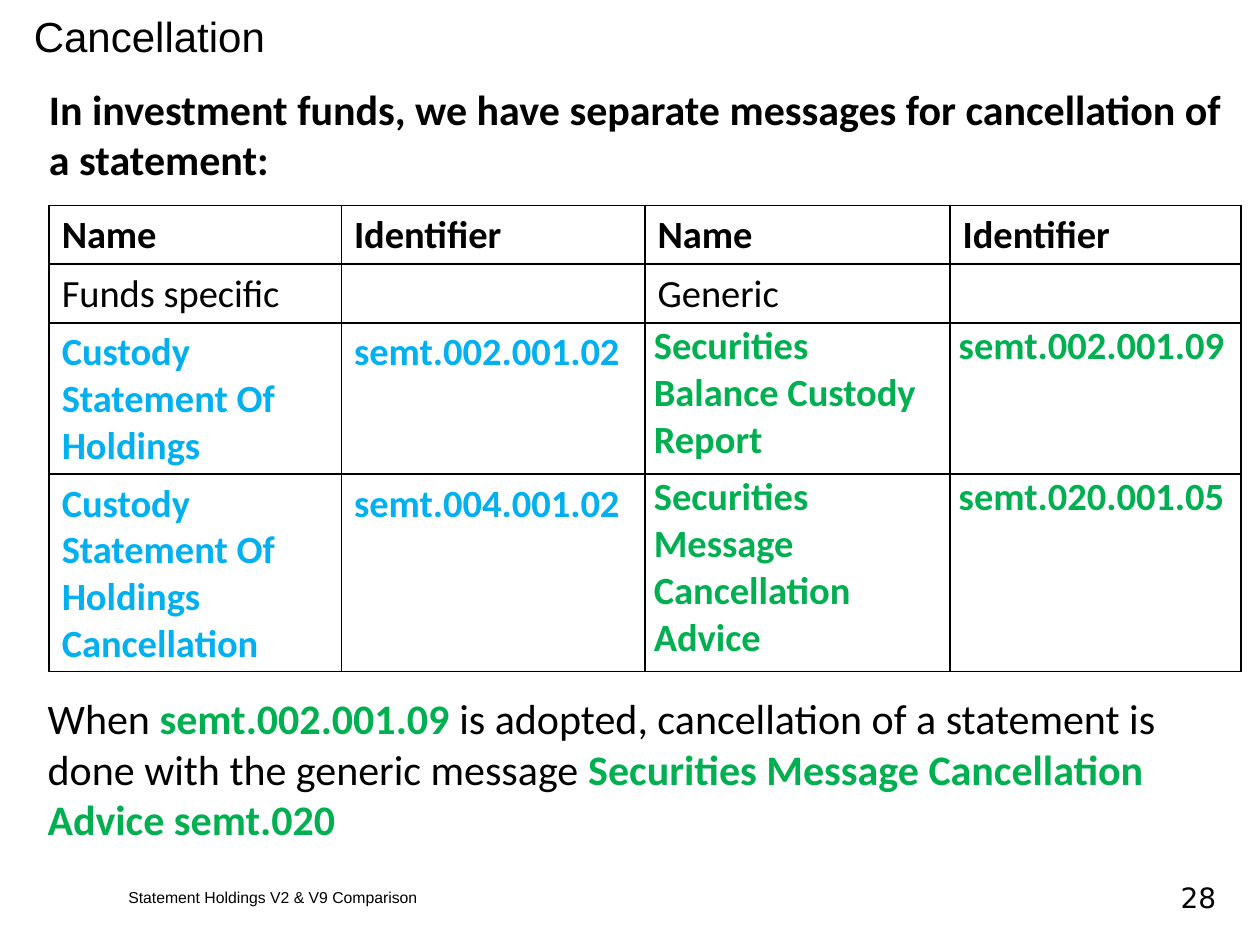
from typing import NamedTuple

from lxml.etree import SubElement as Sub
from pptx import Presentation
from pptx.dml.color import RGBColor as Color
from pptx.enum.text import MSO_ANCHOR as Anchor, PP_ALIGN as Align
from pptx.oxml.ns import qn
from pptx.util import Emu, Inches, Pt

BLACK = Color(0x00, 0x00, 0x00)
BLUE = Color(0x00, 0xB0, 0xF0)
GREEN = Color(0x00, 0xB0, 0x50)
WIDE, HIGH = Inches(10), Inches(7.5)


class Box(NamedTuple):
    """A frame in percent of the slide's width and height."""
    left: float
    top: float
    width: float
    height: float

    def emu(self) -> tuple:
        sides = (WIDE, HIGH, WIDE, HIGH)
        return tuple(Emu(int(side * part / 100)) for side, part in zip(sides, self))


class Run(NamedTuple):
    text: str
    color: Color = BLACK
    bold: bool = False


class Cell(NamedTuple):
    run: Run
    tight: bool = False


def write(frame, *runs: Run, size: float, font: str = "Calibri", align=Align.LEFT) -> None:
    frame.word_wrap = True
    para = frame.paragraphs[0]
    para.alignment = align
    for item in runs:
        run = para.add_run()
        run.text = item.text
        run.font.name = font
        run.font.size = Pt(size)
        run.font.bold = item.bold
        run.font.color.rgb = item.color


def label(slide, box: Box, *runs: Run, anchor=Anchor.TOP, **style) -> None:
    frame = slide.shapes.add_textbox(*box.emu()).text_frame
    write(frame, *runs, **style)
    frame.vertical_anchor = anchor


def rule(cell) -> None:
    """Draw a thin black line on all four sides of a cell."""
    props = cell._tc.get_or_add_tcPr()
    for side in ("lnL", "lnR", "lnT", "lnB"):
        line = Sub(props, qn(f"a:{side}"), w=str(Pt(1)))
        Sub(Sub(line, qn("a:solidFill")), qn("a:srgbClr"), val=str(BLACK))


def grid(slide, box: Box, cols: tuple, rows: tuple, cells: list) -> None:
    """Add a table; cols and rows are percent of the slide's size."""
    table = slide.shapes.add_table(len(rows), len(cols), *box.emu()).table
    table.first_row = table.horz_banding = False
    for col, part in zip(table.columns, cols):
        col.width = int(WIDE * part / 100)
    for row, part, line in zip(table.rows, rows, cells):
        row.height = int(HIGH * part / 100)
        for cell, item in zip(row.cells, line):
            rule(cell)
            cell.fill.background()
            if item.tight:
                cell.margin_left = cell.margin_right = Inches(0.07)
                cell.margin_top = cell.margin_bottom = 0
                cell.text_frame.paragraphs[0].space_after = Pt(2)
            if item.run.text:
                write(cell.text_frame, item.run, size=22)


def pair(old: str, old_id: str, new: str, new_id: str) -> list:
    """One row: the funds message in blue, the generic one in green."""
    return ([Cell(Run(text, BLUE, True)) for text in (old, old_id)]
            + [Cell(Run(text, GREEN, True), tight=True) for text in (new, new_id)])


def main() -> None:
    deck = Presentation()
    deck.slide_width, deck.slide_height = WIDE, HIGH
    slide = deck.slides.add_slide(deck.slide_layouts[6])

    label(slide, Box(1.7, 0, 97.3, 7.47), Run("Cancellation"),
          size=24, font="Arial", anchor=Anchor.MIDDLE)
    label(slide, Box(9.2, 93.33, 62.1, 3.33), Run("Statement Holdings V2 & V9 Comparison"),
          size=9, font="Arial", anchor=Anchor.MIDDLE)
    label(slide, Box(89.2, 93.33, 8.3, 3.33), Run("28"),
          size=16, font="DejaVu Sans", align=Align.RIGHT, anchor=Anchor.MIDDLE)
    label(slide, Box(2.9, 8.13, 96.9, 12.13),
          Run("In investment funds, we have separate messages "
              "for cancellation of a statement:", bold=True), size=24)

    heads = [Cell(Run(text, bold=True)) for text in ("Name", "Identifier") * 2]
    kinds = [Cell(Run(text)) for text in ("Funds specific", "", "Generic", "")]
    grid(slide, Box(3.9, 21.73, 94.6, 49.33),
         cols=(23.2, 24.1, 24.2, 23.1), rows=(6.23, 6.23, 16, 20.87),
         cells=[heads, kinds,
                pair("Custody Statement Of Holdings", "semt.002.001.02",
                     "Securities Balance Custody Report", "semt.002.001.09"),
                pair("Custody Statement Of Holdings Cancellation", "semt.004.001.02",
                     "Securities Message Cancellation Advice", "semt.020.001.05")])

    label(slide, Box(2.8, 72.67, 96.9, 17.47),
          Run("When "), Run("semt.002.001.09", GREEN, True),
          Run(" is adopted, cancellation of a statement is done with the generic message "),
          Run("Securities Message Cancellation Advice semt.020", GREEN, True), size=24)

    deck.save("out.pptx")


if __name__ == "__main__":
    main()
